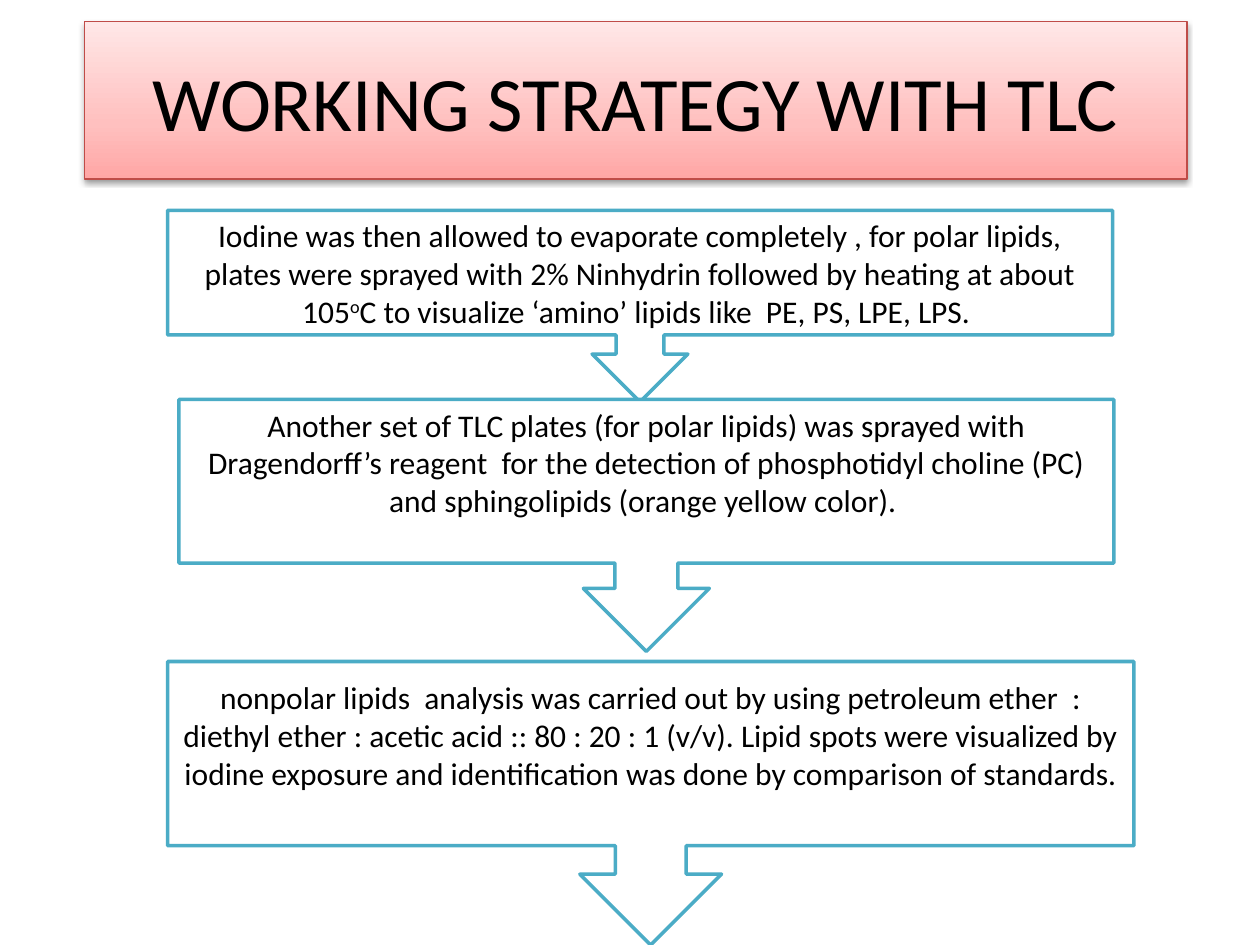
"""Build a slide with a title bar and a chain of three arrow callouts on TLC."""
from lxml.etree import SubElement
from pptx import Presentation
from pptx.dml.color import RGBColor
from pptx.enum.shapes import MSO_SHAPE
from pptx.enum.text import MSO_ANCHOR, PP_ALIGN
from pptx.oxml.ns import qn
from pptx.util import Inches, Pt

COLORS = {
    "text": "000000",
    "callout_fill": "FFFFFF",
    "callout_line": "4BACC6",
    "title_line": "BF4C48",
    "title_bottom": "FFA6A5",
    "title_middle": "FFC0BF",
    "title_top": "FFE7E7",
    "shadow": "000000",
}


def add_span(para, text, size=18, color="text", baseline=0):
    span = para.add_run()
    span.text = text
    span.font.name = "Calibri"
    span.font.size = Pt(size)
    span.font.color.rgb = RGBColor.from_string(COLORS[color])
    if baseline:
        span.font._element.set("baseline", str(baseline * 1000))


def add_box(kind, position, line, width):
    box = slide.shapes.add_shape(kind, *[Inches(value) for value in position])
    box.shadow.inherit = False
    box.line.color.rgb = RGBColor.from_string(COLORS[line])
    box.line.width = Pt(width)
    box.text_frame.word_wrap = True
    box.text_frame.vertical_anchor = MSO_ANCHOR.MIDDLE
    box.text_frame.paragraphs[0].alignment = PP_ALIGN.CENTER
    return box


deck = Presentation()
deck.slide_width = Inches(10)
deck.slide_height = Inches(7.5)
slide = deck.slides.add_slide(deck.slide_layouts[6])

title = add_box(MSO_SHAPE.RECTANGLE, (0.67, 0.17, 8.75, 1.25), "title_line", 0.75)
add_span(title.text_frame.paragraphs[0], "WORKING STRATEGY WITH TLC", size=44)

title.fill.gradient()
title.fill.gradient_angle = 90
properties = title._element.spPr
stops = properties.find(qn("a:gradFill")).find(qn("a:gsLst"))
stops.clear()
for percent, name in ((0, "title_bottom"), (35, "title_middle"), (100, "title_top")):
    stop = SubElement(stops, qn("a:gs"), pos=str(percent * 1000))
    SubElement(stop, qn("a:srgbClr"), val=COLORS[name])

shadow = SubElement(
    properties.find(qn("a:effectLst")), qn("a:outerShdw"),
    blurRad=str(Pt(3.1)), dist=str(Pt(1.6)), dir="5400000", rotWithShape="0",
)
shadow_color = SubElement(shadow, qn("a:srgbClr"), val=COLORS["shadow"])
SubElement(shadow_color, qn("a:alpha"), val="38000")

callouts = [
    ((1.33, 1.67, 7.5, 1.52), 0.05, [
        ("Iodine was then allowed to evaporate completely , for polar lipids, plates were "
         "sprayed with 2% Ninhydrin followed by heating at about 105", 0),
        ("o", 30),
        ("C to visualize ‘amino’ lipids like  PE, PS, LPE, LPS. ", 0),
    ]),
    ((1.42, 3.17, 7.42, 2), 0.35, [
        ("Another set of TLC plates (for polar lipids) was sprayed with Dragendorff’s "
         "reagent  for the detection of phosphotidyl choline (PC) and sphingolipids "
         "(orange yellow color). ", 0),
    ]),
    ((1.33, 5.25, 7.67, 2.25), 0.35, [
        ("nonpolar lipids  analysis was carried out by using petroleum ether  : diethyl "
         "ether : acetic acid :: 80 : 20 : 1 (v/v). Lipid spots were visualized by iodine "
         "exposure and identification was done by comparison of standards.", 0),
    ]),
]
for position, bottom_margin, spans in callouts:
    callout = add_box(MSO_SHAPE.DOWN_ARROW_CALLOUT, position, "callout_line", 2)
    callout.fill.solid()
    callout.fill.fore_color.rgb = RGBColor.from_string(COLORS["callout_fill"])
    callout.text_frame.margin_bottom = Inches(bottom_margin)
    for text, baseline in spans:
        add_span(callout.text_frame.paragraphs[0], text, baseline=baseline)

deck.save("out.pptx")
